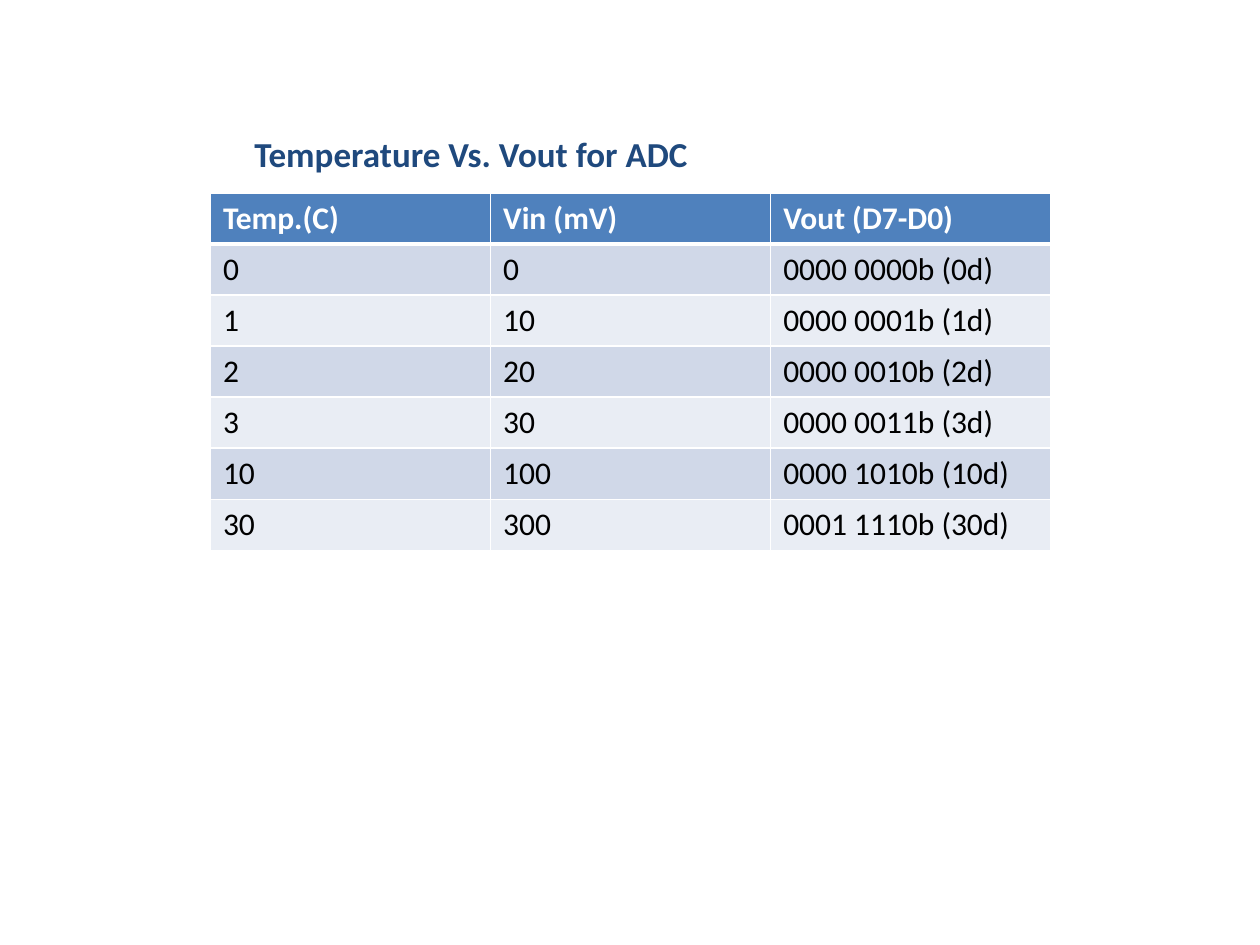
from lxml.etree import SubElement
from pptx import Presentation
from pptx.dml.color import RGBColor
from pptx.oxml.ns import qn
from pptx.util import Inches, Pt

TITLE = "Temperature Vs. Vout for ADC"
ROWS = [
    ("Temp.(C)", "Vin (mV)", "Vout (D7-D0)"),
    ("0", "0", "0000 0000b (0d)"),
    ("1", "10", "0000 0001b (1d)"),
    ("2", "20", "0000 0010b (2d)"),
    ("3", "30", "0000 0011b (3d)"),
    ("10", "100", "0000 1010b (10d)"),
    ("30", "300", "0001 1110b (30d)"),
]
COLORS = {
    "title": "1F497D",
    "header": "4F81BD",
    "odd": "D0D8E8",
    "even": "E9EDF4",
    "header_text": "FFFFFF",
    "text": "000000",
    "border": "FFFFFF",
}
LEFT, TOP, WIDTH, HEIGHT = 1.67, 1.53, 6.67, 2.84


def style(p, size, color, bold):
    p.font.name = "Calibri"
    p.font.size = Pt(size)
    p.font.bold = bold
    p.font.color.rgb = RGBColor.from_string(COLORS[color])


def set_borders(cell, top, bottom):
    """Draw all four cell edges; must run before the cell gets its fill."""
    tcPr = cell._tc.get_or_add_tcPr()
    for side, width in (("L", 1), ("R", 1), ("T", top), ("B", bottom)):
        ln = SubElement(tcPr, qn(f"a:ln{side}"), w=str(Pt(width)))
        fill = SubElement(ln, qn("a:solidFill"))
        SubElement(fill, qn("a:srgbClr"), val=COLORS["border"])


prs = Presentation()
prs.slide_width, prs.slide_height = Inches(10), Inches(7.5)
s = prs.slides.add_slide(prs.slide_layouts[6])

table = s.shapes.add_table(len(ROWS), len(ROWS[0]), Inches(LEFT), Inches(TOP),
                           Inches(WIDTH), Inches(HEIGHT)).table
for i, row in enumerate(ROWS):
    header = i == 0
    fill = "header" if header else "odd" if i % 2 else "even"
    for j, text in enumerate(row):
        cell = table.cell(i, j)
        set_borders(cell, top=3 if i == 1 else 1, bottom=3 if header else 1)
        cell.fill.solid()
        cell.fill.fore_color.rgb = RGBColor.from_string(COLORS[fill])
        cell.text = text
        style(cell.text_frame.paragraphs[0], 18,
              "header_text" if header else "text", header)

tf = s.shapes.add_textbox(Inches(1.92), Inches(1), Inches(3.67), Inches(0.44)).text_frame
tf.word_wrap = False
tf.text = TITLE
style(tf.paragraphs[0], 20, "title", True)

prs.save("out.pptx")
